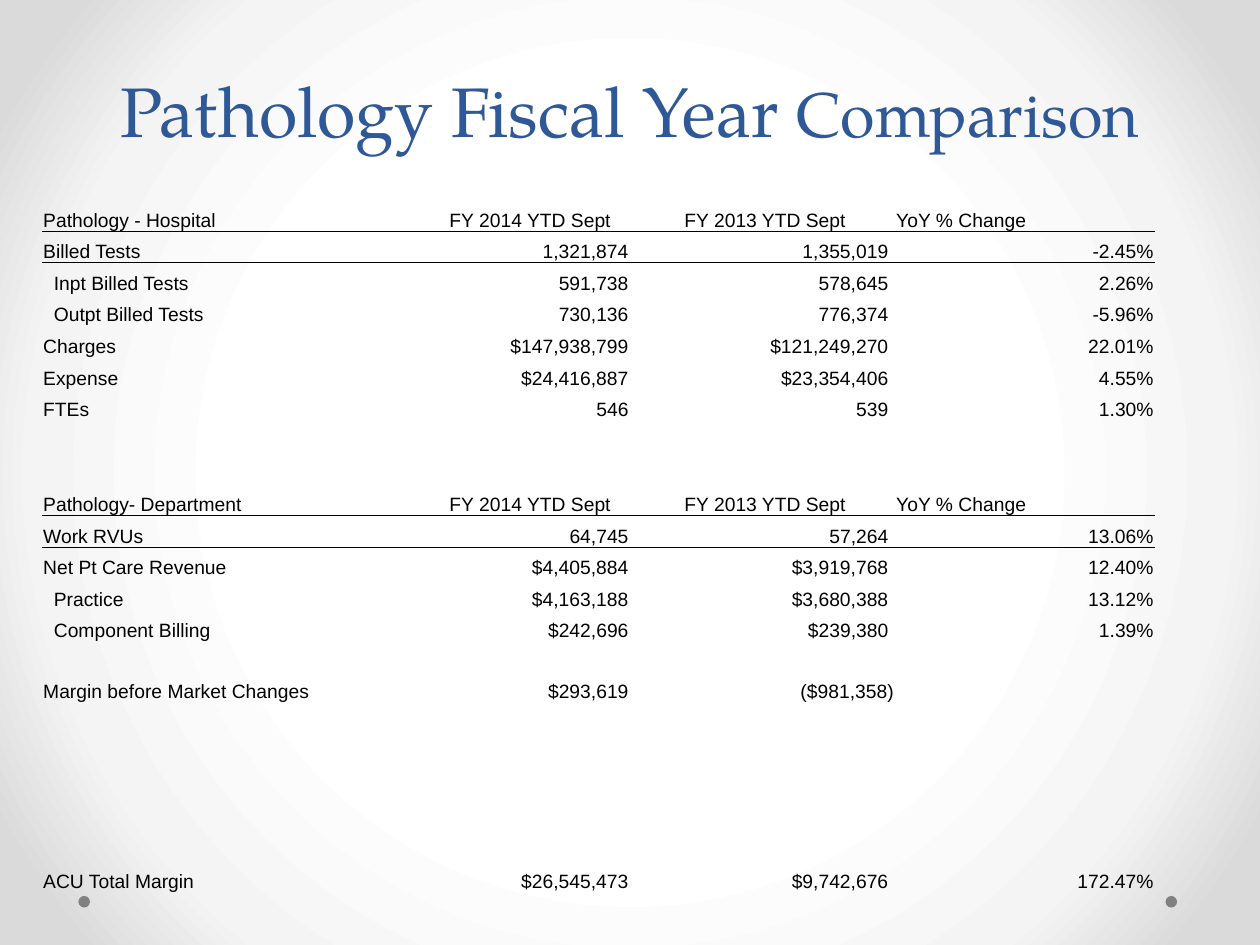
from lxml import etree
from pptx import Presentation
from pptx.dml import color
from pptx.enum import shapes, text
from pptx.oxml import ns, parse_xml
from pptx.util import Pt

COLORS = {
    "title": "2F5897",
    "ink": "000000",
    "dot": "808080",
}
BACKDROP = [(50, "FFFFFF"), (76, "F4F4F4"), (92, "DADADA")]
PLAIN_TABLE = "{2D5ABB26-0587-4C30-8999-92F81FD0307C}"
LEFT, CENTER, RIGHT = text.PP_ALIGN.LEFT, text.PP_ALIGN.CENTER, text.PP_ALIGN.RIGHT
PERIODS = ["FY 2014 YTD Sept", "FY 2013 YTD Sept", "YoY % Change"]
EMPTY = [""] * 4
INDENTED = {"Inpt Billed Tests", "Outpt Billed Tests", "Practice", "Component Billing"}
COLUMN_WIDTHS = [219, 120, 148.5, 148.5]
ROW_HEIGHT, MARGIN_ROW_HEIGHT = 18.06, 34.7

ROWS = [
    ["Pathology - Hospital", *PERIODS],
    ["Billed Tests", "1,321,874", "1,355,019", "-2.45%"],
    ["Inpt Billed Tests", "591,738", "578,645", "2.26%"],
    ["Outpt Billed Tests", "730,136", "776,374", "-5.96%"],
    ["Charges", "$147,938,799", "$121,249,270", "22.01%"],
    ["Expense", "$24,416,887", "$23,354,406", "4.55%"],
    ["FTEs", "546", "539", "1.30%"],
    *[EMPTY] * 2,
    ["Pathology- Department", *PERIODS],
    ["Work RVUs", "64,745", "57,264", "13.06%"],
    ["Net Pt Care Revenue", "$4,405,884", "$3,919,768", "12.40%"],
    ["Practice", "$4,163,188", "$3,680,388", "13.12%"],
    ["Component Billing", "$242,696", "$239,380", "1.39%"],
    ["Margin before Market Changes", "$293,619", "($981,358)", ""],
    *[EMPTY] * 5,
    ["ACU Total Margin", "$26,545,473", "$9,742,676", "172.47%"],
]


def rgb(name):
    return color.RGBColor.from_string(COLORS[name])


def add_text(p, content, size=11, font="Arial", ink="ink", align=LEFT):
    p.alignment = align
    r = p.add_run()
    r.text = content
    r.font.size = Pt(size)
    r.font.name = font
    r.font.color.rgb = rgb(ink)


def set_background(s):
    s.background.fill.solid()
    bg_pr = s.background._cSld.bg.bgPr
    stops = "".join(
        f'<a:gs pos="{pos * 1000}"><a:srgbClr val="{value}"/></a:gs>'
        for pos, value in BACKDROP
    )
    gradient = parse_xml(
        f'<a:gradFill {ns.nsdecls("a")} rotWithShape="1"><a:gsLst>{stops}</a:gsLst>'
        '<a:path path="circle"><a:fillToRect l="50000" t="50000" r="50000" b="50000"/>'
        "</a:path></a:gradFill>"
    )
    bg_pr.replace(bg_pr[0], gradient)


def add_dot(s, left):
    sp = s.shapes.add_shape(
        shapes.MSO_SHAPE.OVAL, Pt(left), Pt(512), Pt(6.6), Pt(6.6)
    )
    sp.shadow.inherit = False
    sp.fill.solid()
    sp.fill.fore_color.rgb = rgb("dot")
    sp.line.fill.background()


def format_title(s):
    sp = s.shapes.title
    sp.left, sp.top, sp.width, sp.height = Pt(36), Pt(-36), Pt(648), Pt(126)
    tf = sp.text_frame
    tf.word_wrap = True
    tf.auto_size = text.MSO_AUTO_SIZE.NONE
    tf.vertical_anchor = text.MSO_ANCHOR.BOTTOM
    p = tf.paragraphs[0]
    p.line_spacing = Pt(58)
    for content, size in [("Pathology Fiscal Year ", 40), ("Comparison", 36)]:
        add_text(p, content, size=size, font="TeX Gyre Pagella", ink="title", align=CENTER)


def add_rule(cell, side):
    line = parse_xml(
        f'<a:{side} {ns.nsdecls("a")} w="{Pt(0.5)}"><a:solidFill>'
        f'<a:srgbClr val="{COLORS["ink"]}"/></a:solidFill></a:{side}>'
    )
    cell._tc.get_or_add_tcPr().insert(0, line)


def fill_cell(cell, content, column, is_header):
    cell.fill.background()
    cell.vertical_anchor = text.MSO_ANCHOR.BOTTOM
    cell.margin_left = Pt(6.8 if content in INDENTED else 0.7)
    padded = column in (1, 2) and not content.startswith("(")
    cell.margin_right = Pt(3.8 if padded and not is_header else 0.7)
    cell.margin_top, cell.margin_bottom = Pt(0.7), Pt(0)
    p = cell.text_frame.paragraphs[0]
    if not content:
        etree.SubElement(p._p, ns.qn("a:endParaRPr"), sz="1100")
        return
    if is_header:
        align = CENTER if column in (1, 2) else LEFT
    else:
        align = RIGHT if column else LEFT
    add_text(p, content, align=align)


def add_comparison_table(s):
    heights = [
        MARGIN_ROW_HEIGHT if row[0].startswith("Margin") else ROW_HEIGHT for row in ROWS
    ]
    frame = s.shapes.add_table(
        len(ROWS), len(COLUMN_WIDTHS), Pt(24), Pt(114),
        Pt(sum(COLUMN_WIDTHS)), Pt(sum(heights)),
    )
    table = frame.table
    table.first_row = table.horz_banding = False
    table._tbl.tblPr.find(ns.qn("a:tableStyleId")).text = PLAIN_TABLE
    for column, width in zip(table.columns, COLUMN_WIDTHS):
        column.width = Pt(width)
    after_header = False
    for i, row in enumerate(ROWS):
        table.rows[i].height = Pt(heights[i])
        is_header = row[1:] == PERIODS
        for j, content in enumerate(row):
            cell = table.cell(i, j)
            fill_cell(cell, content, j, is_header)
            if is_header:
                add_rule(cell, "lnB")
            elif after_header:
                add_rule(cell, "lnT")
        after_header = is_header


def main():
    prs = Presentation()
    prs.slide_width, prs.slide_height = Pt(720), Pt(540)
    s = prs.slides.add_slide(prs.slide_layouts[5])
    set_background(s)
    for left in (666, 44.8):
        add_dot(s, left)
    format_title(s)
    add_comparison_table(s)
    prs.save("out.pptx")


if __name__ == "__main__":
    main()
